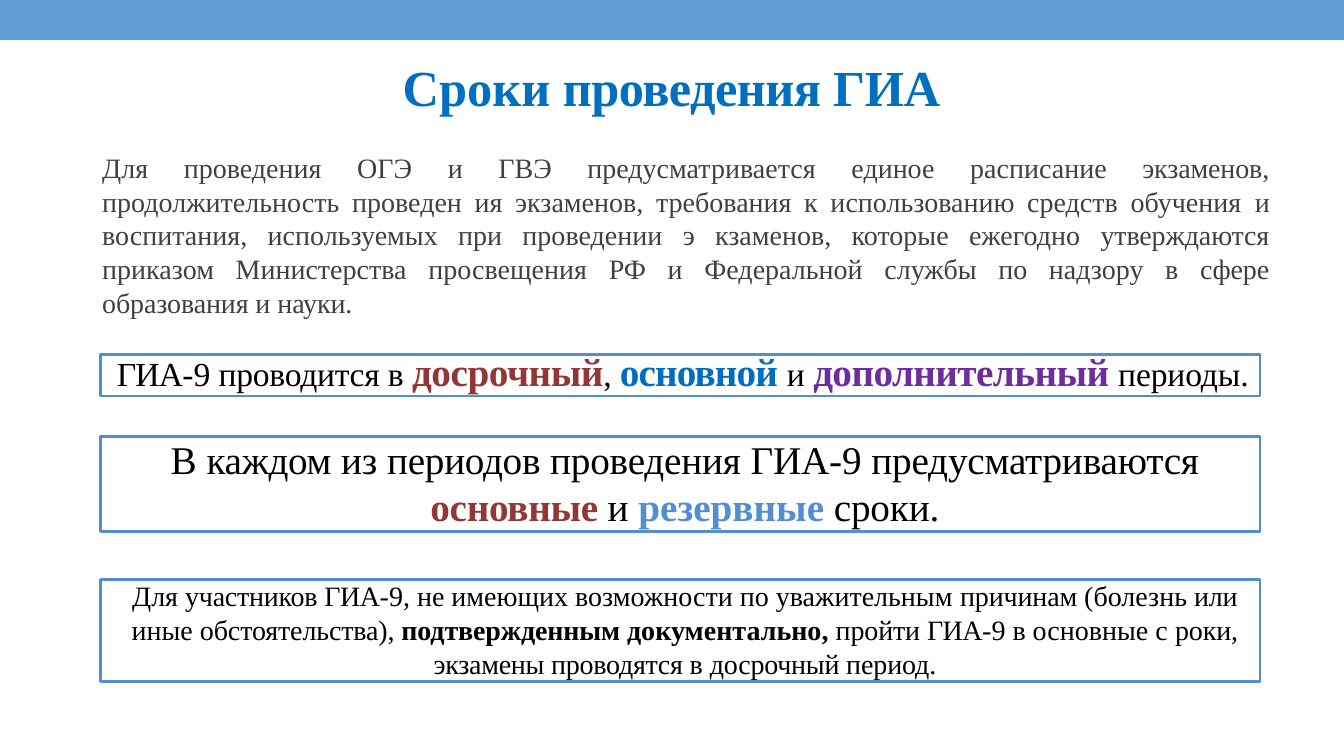
from pptx import Presentation
from pptx.dml.color import RGBColor as RGB
from pptx.enum.shapes import MSO_SHAPE as SHAPE
from pptx.enum.text import MSO_ANCHOR as ANCHOR, MSO_AUTO_SIZE as FIT, PP_ALIGN as ALIGN
from pptx.util import Pt

THEME = {
    "font": "Times New Roman",
    "band": "619DD1",
    "border": "538ED3",
    # text styles: size, colour, bold
    "title": (36, "006FC0", True),
    "intro": (20, "404040", False),
    "periods": (24, "000000", False),
    "early": (28, "923735", True),
    "main": (28, "006DC0", True),
    "extra": (28, "6D2D9F", True),
    "dates": (28, "000000", False),
    "basic": (28, "933735", True),
    "reserve": (28, "538ED3", True),
    "note": (20, "000000", False),
    "strong": (20, "000000", True),
}

# Runs: text, style, letter spacing, extra width of each word gap (points)
TITLE = [("Сроки ", "title", 0), ("проведения ", "title", -0.4), ("ГИА", "title", -0.2)]
INTRO = [
    ("Для проведения ОГЭ и ГВЭ предусматривается единое расписание ", "intro", 0, 10),
    ("экзаменов, ", "intro", -0.1),
    ("продолжительность проведен ия экзаменов, требования к использованию "
     "средств обучения ", "intro", 0),
    ("и ", "intro", -0.5),
    ("воспитания, используемых при проведении э кзаменов, которые ежегодно ", "intro", 0, 5),
    ("утверждаются ", "intro", -0.1),
    ("приказом Министерства просвещения РФ и Федеральной службы по надзору в ",
     "intro", 0, 5),
    ("сфере образования ", "intro", -0.1),
    ("и ", "intro", 0),
    ("науки.", "intro", -0.1),
]
PERIODS = [[
    ("ГИА-", "periods", -0.6), ("9 ", "periods", 0), ("проводится ", "periods", -0.2),
    ("в ", "periods", 0), ("досрочный", "early", -0.3), (", ", "periods", -0.3),
    ("основной ", "main", -0.6), ("и ", "periods", 0),
    ("дополнительный ", "extra", -0.4), ("периоды.", "periods", -0.1),
]]
DATES = [
    [("В ", "dates", 0), ("каждом ", "dates", -0.2), ("из ", "dates", 0),
     ("периодов ", "dates", -0.2), ("проведения ", "dates", -0.1),
     ("ГИА-", "dates", -0.2), ("9 ", "dates", 0), ("предусматриваются", "dates", -0.1)],
    [("основные ", "basic", -0.2), ("и ", "dates", 0),
     ("резервные ", "reserve", 0), ("сроки.", "dates", -0.1)],
]
NOTE = [
    [("Для ", "note", 0), ("участников ", "note", -0.2), ("ГИА-", "note", -0.3),
     ("9, не имеющих возможности по уважительным ", "note", 0),
     ("причинам ", "note", -0.1), ("(болезнь ", "note", 0), ("или", "note", -0.2)],
    [("иные ", "note", 0), ("обстоятельства), ", "note", -0.1),
     ("подтвержденным ", "strong", -0.1), ("документально, ", "strong", 0),
     ("пройти ", "note", -0.1), ("ГИА-", "note", -0.4),
     ("9 в основные с ", "note", 0), ("роки,", "note", -0.1)],
    [("экзамены проводятся ", "note", -0.2), ("в ", "note", 0),
     ("досрочный ", "note", -0.2), ("период.", "note", -0.1)],
]
# Boxes: top, height, alignment, indent, first line height, paragraphs
BOX_LEFT, BOX_WIDTH = 72, 828
BOXES = [
    (253.4, 29.5, ALIGN.LEFT, 11.5, 28.1, PERIODS),
    (311.8, 67.7, ALIGN.CENTER, 6.5, 32.6, DATES),
    (414, 72.7, ALIGN.CENTER, 6.5, 23.4, NOTE),
]


def add_run(p, text, style, spacing):
    size, color, bold = THEME[style]
    r = p.add_run()
    r.text = text
    r.font.name, r.font.size, r.font.bold = THEME["font"], Pt(size), bold
    r.font.color.rgb = RGB.from_string(color)
    r._r.get_or_add_rPr().set("spc", str(round(spacing * 100)))


def add_runs(p, runs):
    for text, style, spacing, *gap in runs:
        if not gap:
            add_run(p, text, style, spacing)
            continue
        for word in text.split():
            add_run(p, word, style, spacing)
            add_run(p, " ", style, gap[0])


def set_paragraph(p, align, indent, before=0):
    p.alignment, p.space_before = align, Pt(before)
    pPr = p._p.get_or_add_pPr()
    pPr.set("marL", str(Pt(indent)))
    pPr.set("indent", "0")


def set_frame(tf, top=0):
    tf.word_wrap, tf.auto_size, tf.vertical_anchor = True, FIT.NONE, ANCHOR.TOP
    tf.margin_left = tf.margin_right = tf.margin_bottom = 0
    tf.margin_top = Pt(top)


def add_rect(s, left, top, width, height):
    sp = s.shapes.add_shape(SHAPE.RECTANGLE, Pt(left), Pt(top), Pt(width), Pt(height))
    sp.shadow.inherit = False
    return sp


def main():
    prs = Presentation()
    prs.slide_width, prs.slide_height = Pt(960), Pt(540)
    s = prs.slides.add_slide(prs.slide_layouts[5])

    # Top band
    band = add_rect(s, 0, 0, 960, 28.8)
    band.fill.solid()
    band.fill.fore_color.rgb = RGB.from_string(THEME["band"])
    band.line.fill.background()

    # Title
    title = s.shapes.title
    title.left, title.top, title.width, title.height = map(Pt, (286.6, 38.9, 386.6, 45.4))
    set_frame(title.text_frame, 1)
    p = title.text_frame.paragraphs[0]
    set_paragraph(p, ALIGN.LEFT, 1, 1)
    add_runs(p, TITLE)

    # Introduction
    intro = s.shapes.add_textbox(Pt(72), Pt(106.6), Pt(834.5), Pt(122.4))
    set_frame(intro.text_frame, 1)
    p = intro.text_frame.paragraphs[0]
    set_paragraph(p, ALIGN.JUSTIFY, 1, 1.1)
    add_runs(p, INTRO)

    # Framed statements
    for top, height, align, indent, first_line, paragraphs in BOXES:
        sp = add_rect(s, BOX_LEFT, top, BOX_WIDTH, height)
        sp.fill.background()
        sp.line.color.rgb = RGB.from_string(THEME["border"])
        sp.line.width = Pt(1.92)
        tf = sp.text_frame
        set_frame(tf)
        for i, runs in enumerate(paragraphs):
            p = tf.add_paragraph() if i else tf.paragraphs[0]
            set_paragraph(p, align, indent)
            if i == 0:
                p.line_spacing = Pt(first_line)
            add_runs(p, runs)

    prs.save("out.pptx")


if __name__ == "__main__":
    main()
